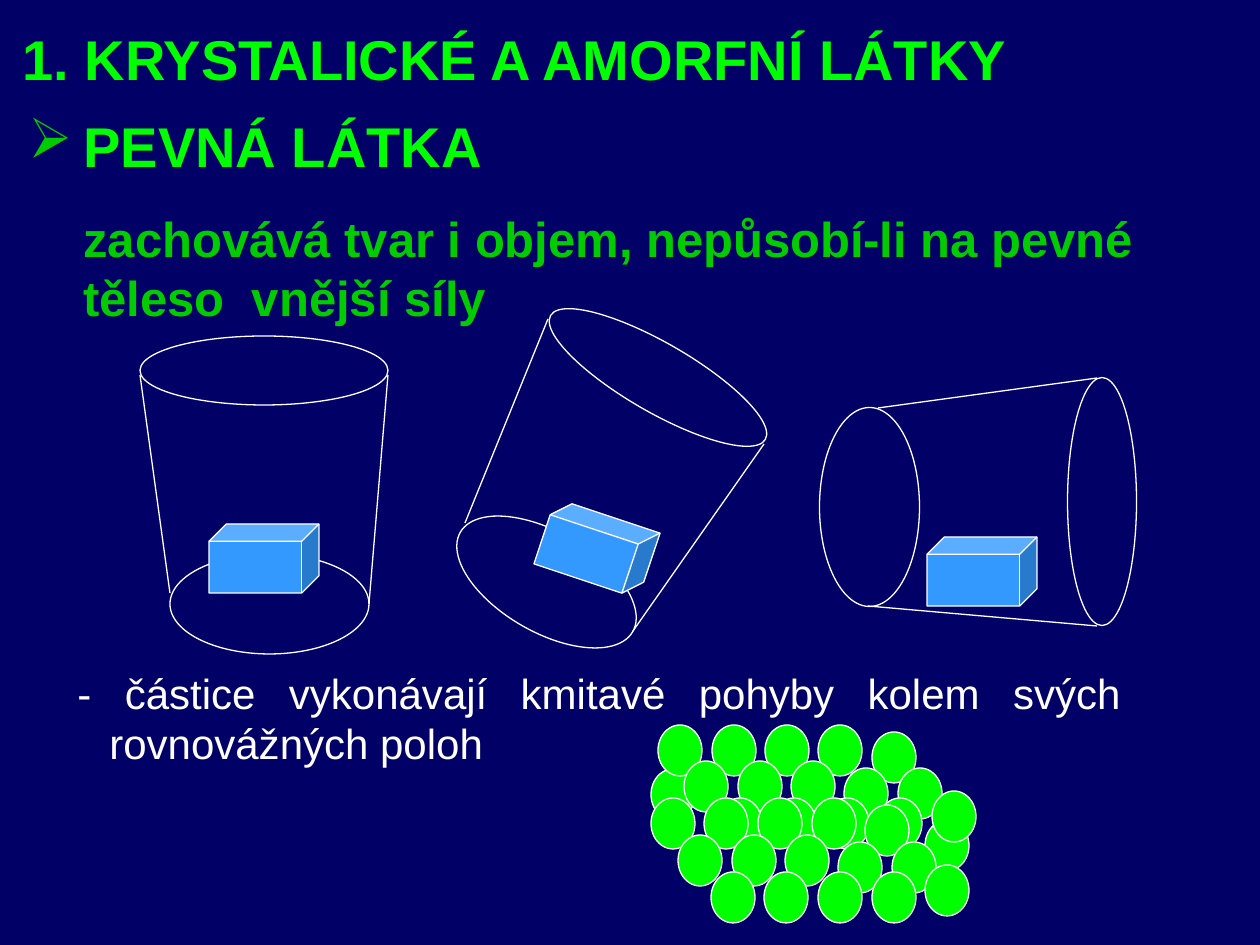
from lxml import etree
from pptx import Presentation
from pptx.dml.color import RGBColor
from pptx.enum.shapes import MSO_CONNECTOR, MSO_SHAPE
from pptx.enum.text import MSO_AUTO_SIZE, PP_ALIGN
from pptx.oxml.ns import qn
from pptx.util import Emu, Pt

ELLIPSE, CUBE = MSO_SHAPE.OVAL, MSO_SHAPE.CUBE
STRAIGHT = MSO_CONNECTOR.STRAIGHT
GROW = MSO_AUTO_SIZE.SHAPE_TO_FIT_TEXT
LEFT, CENTER, JUSTIFY = PP_ALIGN.LEFT, PP_ALIGN.CENTER, PP_ALIGN.JUSTIFY

PX_PER_INCH = 126
FONT = "Arial"
COLORS = {
    "background": "000066",
    "heading": "00FF00",
    "definition": "00CC00",
    "white": "FFFFFF",
    "solid": "3399FF",
    "particle": "00FF00",
}

BASE_SIZE = (199, 100)
RIM_SIZE = (248, 69)
SOLID_SIZE = (110, 69)
# Each vessel: corners of base, rim and solid, their turns, and the two walls
VESSELS = [
    {"base": (170, 554), "rim": (140, 336), "turn": 0,
     "solid": (209, 524), "solid_turn": 0,
     "walls": [(170, 593, 140, 375), (369, 604, 388, 375)]},
    {"base": (447, 532), "rim": (534, 343), "turn": 30,
     "solid": (542, 514), "solid_turn": 18.4,
     "walls": [(465, 523, 548, 319), (633, 631, 764, 444)]},
    {"base": (770, 457), "rim": (978, 467), "turn": 90,
     "solid": (927, 537), "solid_turn": 0,
     "walls": [(878, 408, 1097, 378), (868, 606, 1097, 626)]},
]

PARTICLE_SIZE = (44, 51)
PARTICLE_STEP = 53.5
# Back to front: left, top, count, how many stay level, shift of the rest
PARTICLE_ROWS = [
    (925, 820, 1, 1, 0),
    (651, 769, 1, 1, 0),
    (658, 725, 5, 4, 7),
    (684, 761, 5, 3, 7),
    (718, 798, 5, 4, -7),
    (651, 798, 5, 4, 7),
    (678, 835, 5, 3, 7),
    (711, 872, 5, 4, -7),
]


def px(length):
    return Emu(round(length * 914400 / PX_PER_INCH))


def color(name):
    return RGBColor.from_string(COLORS[name])


def add_text_box(page, left, top, width, height):
    box = page.shapes.add_textbox(px(left), px(top), px(width), px(height))
    box.text_frame.word_wrap = True
    box.text_frame.auto_size = GROW
    return box.text_frame


def write(para, text, size, color_name, bold=True, align=LEFT, margin=0, indent=0):
    para.text = text
    para.alignment = align
    para.font.name = FONT
    para.font.size = Pt(size)
    para.font.bold = bold
    para.font.color.rgb = color(color_name)
    properties = para._p.get_or_add_pPr()
    properties.set("marL", str(px(margin)))
    properties.set("indent", str(px(indent)))


def add_bullet(para, character, color_name):
    properties = para._p.get_or_add_pPr()
    bullet_color = etree.Element(qn("a:buClr"))
    etree.SubElement(bullet_color, qn("a:srgbClr"), val=COLORS[color_name])
    bullet = etree.Element(qn("a:buChar"), char=character)
    font_defaults = properties.find(qn("a:defRPr"))
    font_defaults.addprevious(bullet_color)
    font_defaults.addprevious(bullet)


def add_outlined(shapes, kind, corner, size, fill=None, turn=0):
    shape = shapes.add_shape(kind, *map(px, corner + size))
    shape.shadow.inherit = False
    shape.rotation = turn
    shape.line.color.rgb = color("white")
    shape.line.width = Pt(0.75)
    if fill:
        shape.fill.solid()
        shape.fill.fore_color.rgb = color(fill)
    else:
        shape.fill.background()


def add_wall(shapes, ends):
    wall = shapes.add_connector(STRAIGHT, *map(px, ends))
    wall.line.color.rgb = color("white")
    wall.line.width = Pt(0.75)
    etree.SubElement(wall._element.spPr, qn("a:effectLst"))


def add_vessel(page, vessel):
    shapes = page.shapes.add_group_shape().shapes
    add_outlined(shapes, ELLIPSE, vessel["base"], BASE_SIZE, turn=vessel["turn"])
    for ends in vessel["walls"]:
        add_wall(shapes, ends)
    add_outlined(shapes, ELLIPSE, vessel["rim"], RIM_SIZE, turn=vessel["turn"])
    add_outlined(shapes, CUBE, vessel["solid"], SOLID_SIZE, "solid", vessel["solid_turn"])


def add_particles(page):
    shapes = page.shapes.add_group_shape().shapes
    for left, top, count, level, shift in PARTICLE_ROWS:
        for column in range(count):
            corner = (round(left + column * PARTICLE_STEP),
                      top if column < level else top + shift)
            add_outlined(shapes, ELLIPSE, corner, PARTICLE_SIZE, "particle")


def main():
    deck = Presentation()
    deck.slide_width, deck.slide_height = px(1260), px(945)
    page = deck.slides.add_slide(deck.slide_layouts[6])
    page.background.fill.solid()
    page.background.fill.fore_color.rgb = color("background")

    # Title
    title = add_text_box(page, -116, 31, 1262, 67).paragraphs[0]
    write(title, "1. KRYSTALICKÉ A AMORFNÍ LÁTKY", 32, "heading", align=CENTER)
    title.line_spacing = 0.8

    # Term and its definition
    frame = add_text_box(page, -21, 105, 1260, 227)
    term = frame.paragraphs[0]
    write(term, "PEVNÁ LÁTKA", 32, "heading", margin=92, indent=-55)
    add_bullet(term, "➢", "definition")
    definition = frame.add_paragraph()
    write(definition, "zachovává tvar i objem, nepůsobí-li na pevné těleso  vnější síly",
          28, "definition", margin=92)
    definition.space_before = Pt(17)

    # Solid body in three vessels
    for vessel in VESSELS:
        add_vessel(page, vessel)

    # Motion of the particles
    motion = add_text_box(page, 31, 661, 1102, 113).paragraphs[0]
    write(motion, "- částice vykonávají kmitavé pohyby kolem svých rovnovážných poloh",
          24, "white", bold=False, align=JUSTIFY, margin=66, indent=-32)
    add_particles(page)

    deck.save("out.pptx")


if __name__ == "__main__":
    main()
